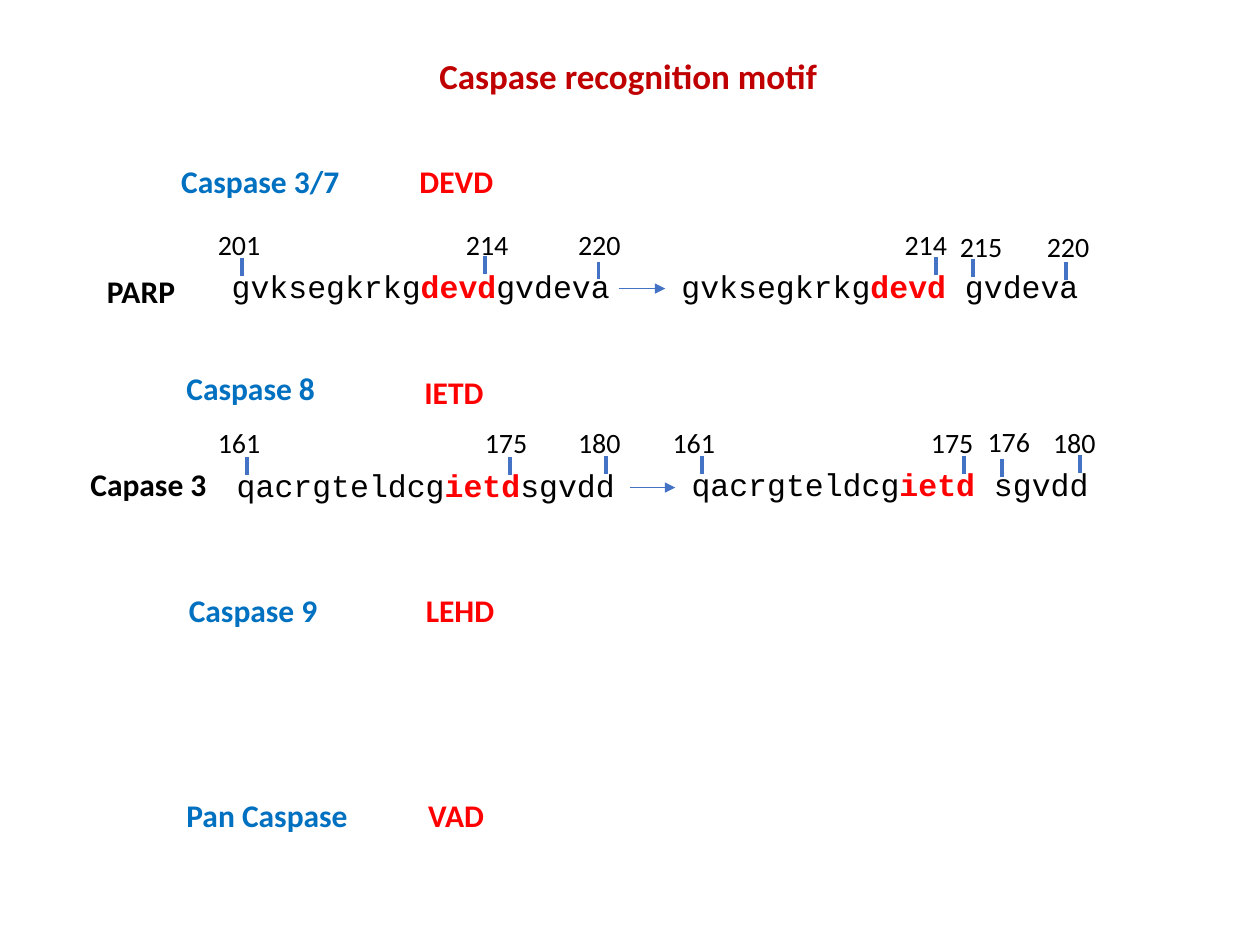
from lxml.etree import SubElement
from pptx import Presentation
from pptx.dml.color import RGBColor
from pptx.enum.shapes import MSO_CONNECTOR
from pptx.enum.text import MSO_AUTO_SIZE
from pptx.oxml.ns import qn
from pptx.util import Pt

DARK_RED = RGBColor(0xC0, 0x00, 0x00)
RED = RGBColor(0xFF, 0x00, 0x00)
BLUE = RGBColor(0x00, 0x70, 0xC0)
LINE_BLUE = RGBColor(0x44, 0x72, 0xC4)
BLACK = RGBColor(0x00, 0x00, 0x00)

TITLE = {"name": "Calibri", "size": Pt(20), "bold": True, "color": DARK_RED}
ENZYME = {"name": "Calibri", "size": Pt(18), "bold": True, "color": BLUE}
MOTIF = {**ENZYME, "color": RED}
PROTEIN = {**ENZYME, "color": BLACK}
POSITION = {"name": "Calibri", "size": Pt(16), "bold": False, "color": BLACK}
RESIDUES = {"name": "Courier New", "size": Pt(18), "bold": False, "color": BLACK}
CLEAVED = {**RESIDUES, "bold": True, "color": RED}

LABEL_HEIGHT = 29
POSITION_WIDTH, POSITION_HEIGHT = 39, 26.6
TICK_LENGTH = 10.2

title = ("Caspase recognition motif", 244, 27.4, 232.6, 31.7)
headings = [
    ("Caspase 3/7", 96.5, 89.3, 105.8, ENZYME),
    ("DEVD", 232.6, 89.3, 56.9, MOTIF),
    ("Caspase 8", 99.4, 207.4, 87.8, ENZYME),
    ("IETD", 235.4, 209.5, 49, MOTIF),
    ("Caspase 9", 100.8, 334.1, 87.8, ENZYME),
    ("LEHD", 236.2, 334.1, 54, MOTIF),
    ("Pan Caspase", 99.4, 451.4, 107.3, ENZYME),
    ("VAD", 237.6, 451.4, 46.8, MOTIF),
]
substrates = [
    {
        "protein": ("PARP", 54, 151.9, 54),
        "sequences": [
            (("gvksegkrkg", "devd", "gvdeva"), 125.3, 149, 241.2),
            (("gvksegkrkg", "devd ", "gvdeva"), 382.3, 149, 241.2),
        ],
        "arrow": (353.5, 380.2, 164.9),
        "positions": [
            ("201", 117.4, 126.7, 138.2, 147.6),
            ("214", 259.2, 126.7, 277.2, 146.2),
            ("220", 323.3, 126.7, 342, 149.5),
            ("214", 509.8, 126.7, 535, 146.9),
            ("215", 541.4, 127.4, 555.8, 148.3),
            ("220", 591.1, 127.4, 609.1, 149.8),
        ],
    },
    {
        "protein": ("Capase 3", 44.6, 262.1, 81.4),
        "sequences": [
            (("qacrgteldcg", "ietd", "sgvdd"), 128.2, 262.8, 237.6),
            (("qacrgteldcg", "ietd ", "sgvdd"), 388.1, 262.1, 249.8),
        ],
        "arrow": (360, 385.9, 278.6),
        "positions": [
            ("161", 117.4, 239.8, 141.1, 261.4),
            ("175", 270, 239.8, 291.6, 261.4),
            ("180", 323.3, 239.8, 346.3, 260.6),
            ("161", 377.3, 239.4, 401, 260.6),
            ("175", 524.9, 239.4, 550.8, 260.6),
            ("176", 557.3, 239, 572.4, 262.1),
            ("180", 594.7, 239.4, 617, 260.3),
        ],
    },
]


def add_text(shapes, pieces, left, top, width, height, wrap=False):
    box = shapes.add_textbox(Pt(left), Pt(top), Pt(width), Pt(height))
    frame = box.text_frame
    frame.word_wrap = wrap
    frame.auto_size = MSO_AUTO_SIZE.SHAPE_TO_FIT_TEXT
    for text, style in pieces:
        run = frame.paragraphs[0].add_run()
        run.text = text
        for key, value in style.items():
            if key == "color":
                run.font.color.rgb = value
            else:
                setattr(run.font, key, value)


def add_line(shapes, x1, y1, x2, y2, weight, arrow=False):
    line = shapes.add_connector(MSO_CONNECTOR.STRAIGHT, Pt(x1), Pt(y1), Pt(x2), Pt(y2))
    line.line.color.rgb = LINE_BLUE
    line.line.width = Pt(weight)
    if arrow:
        SubElement(line.line._get_or_add_ln(), qn("a:tailEnd"), type="triangle")
    SubElement(line._element.spPr, qn("a:effectLst"))


def add_substrate(shapes, substrate):
    name, left, top, width = substrate["protein"]
    add_text(shapes, [(name, PROTEIN)], left, top, width, LABEL_HEIGHT)
    for parts, left, top, width in substrate["sequences"]:
        pieces = zip(parts, (RESIDUES, CLEAVED, RESIDUES))
        add_text(shapes, pieces, left, top, width, LABEL_HEIGHT, wrap=True)
    start, end, y = substrate["arrow"]
    add_line(shapes, start, y, end, y, 0.5, arrow=True)
    for number, left, top, tick_x, tick_y in substrate["positions"]:
        add_text(shapes, [(number, POSITION)], left, top, POSITION_WIDTH, POSITION_HEIGHT)
        add_line(shapes, tick_x, tick_y, tick_x, tick_y + TICK_LENGTH, 2.25)


def main():
    deck = Presentation()
    deck.slide_width, deck.slide_height = Pt(720), Pt(540)
    slide = deck.slides.add_slide(deck.slide_layouts[6])
    text, *place = title
    add_text(slide.shapes, [(text, TITLE)], *place)
    for text, left, top, width, style in headings:
        add_text(slide.shapes, [(text, style)], left, top, width, LABEL_HEIGHT)
    for substrate in substrates:
        add_substrate(slide.shapes.add_group_shape().shapes, substrate)
    deck.save("out.pptx")


if __name__ == "__main__":
    main()
